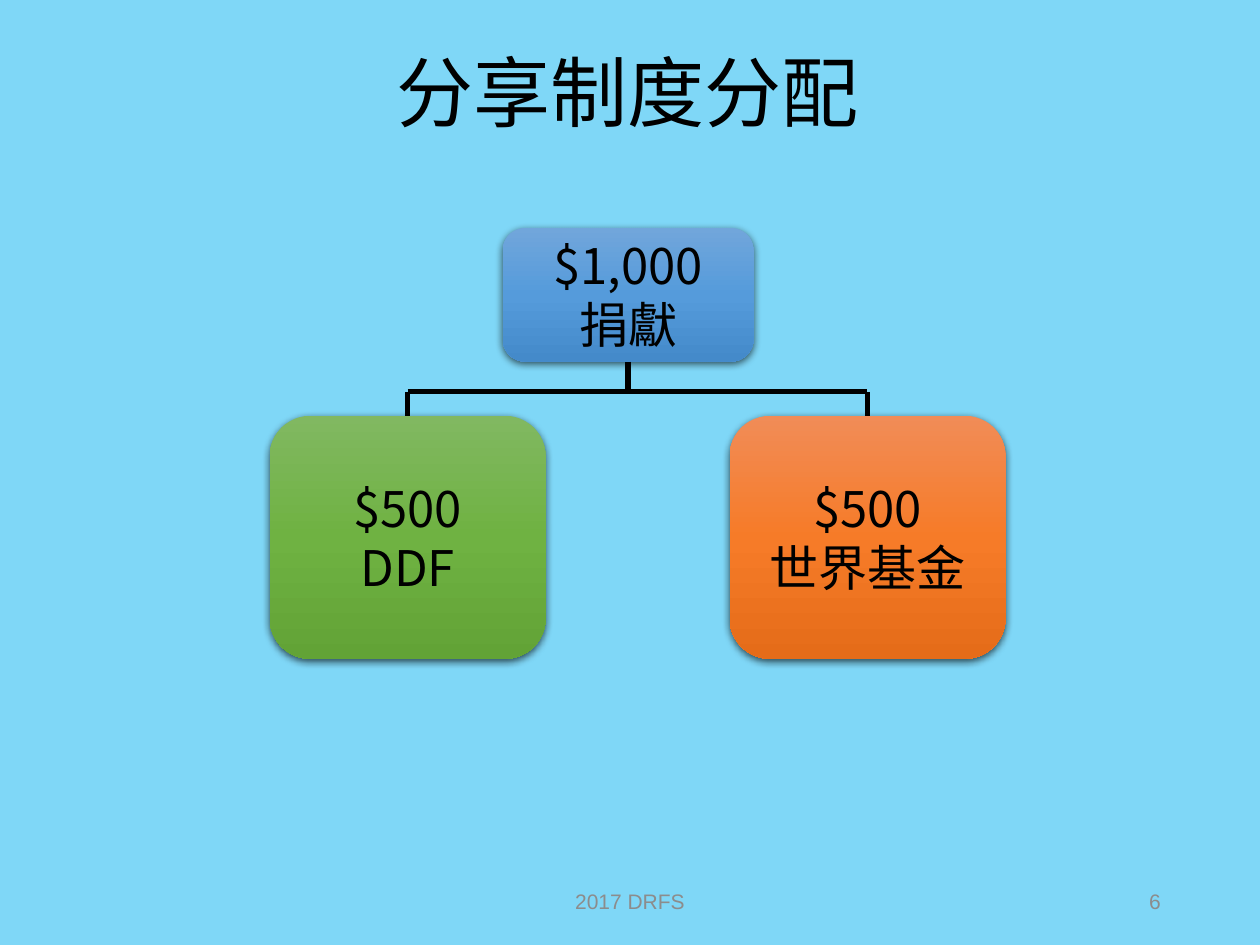
from pptx import Presentation
from pptx import util as u
from pptx.dml.color import RGBColor
from pptx.enum import shapes, text
from pptx.oxml import parse_xml
from pptx.oxml.ns import nsdecls, qn

SKY = RGBColor(0x7F, 0xD7, 0xF7)
BLACK = RGBColor(0, 0, 0)
GREY = RGBColor(0x8C, 0x8C, 0x8C)
BLUES = [RGBColor.from_string(c) for c in ("71A6DB", "559BDB", "448ACA")]
GREENS = [RGBColor.from_string(c) for c in ("81B861", "6FB242", "62A336")]
ORANGES = [RGBColor.from_string(c) for c in ("F18C57", "F67B28", "E56C19")]

CJK = "Noto Sans CJK SC"
CENTER, RIGHT = text.PP_ALIGN.CENTER, text.PP_ALIGN.RIGHT

# Tree geometry in inches
ROOT_AT = (3.99, 1.81, 1.99, 1.06)
BRANCH_SIZE = (2.19, 1.93)
BRANCH_TOP = 3.3
BAR_TOP = 3.11


def write_text(frame, lines, size, color, font=CJK, align=CENTER, spacing=None):
    """Fill a text frame with one paragraph per line."""
    frame.word_wrap = True
    frame.vertical_anchor = text.MSO_ANCHOR.MIDDLE
    font_format = {"size": u.Pt(size), "name": font}
    for index, line in enumerate(lines):
        para = frame.paragraphs[0] if index == 0 else frame.add_paragraph()
        para.alignment = align
        para.line_spacing = spacing
        span = para.add_run()
        span.text = line
        for name, value in font_format.items():
            setattr(span.font, name, value)
        span.font.color.rgb = color
        east_asian = span.font._element.makeelement(qn("a:ea"), {"typeface": font})
        span.font._element.append(east_asian)


def add_title(page, words):
    title = page.shapes.title
    place = dict(zip(("left", "top", "width", "height"),
                     map(u.Inches, (0.67, 0.24, 8.62, 1.05))))
    for name, value in place.items():
        setattr(title, name, value)
    write_text(title.text_frame, [words], 44, BLACK, spacing=0.9)


def add_box(page, at, lines, colors):
    """Rounded box with a vertical three-stop gradient and a soft shadow."""
    box = page.shapes.add_shape(shapes.MSO_SHAPE.ROUNDED_RECTANGLE, *map(u.Inches, at))
    box.line.fill.background()
    stops = "".join(f'<a:gs pos="{index * 50000}"><a:srgbClr val="{color}"/></a:gs>'
                    for index, color in enumerate(colors))
    properties = box._element.spPr
    properties.find(qn("a:prstGeom")).addnext(parse_xml(
        f'<a:gradFill {nsdecls("a")} rotWithShape="1"><a:gsLst>{stops}</a:gsLst>'
        '<a:lin ang="5400000" scaled="0"/></a:gradFill>'))
    properties.append(parse_xml(
        f'<a:effectLst {nsdecls("a")}><a:outerShdw blurRad="{u.Pt(4.5)}" '
        f'dist="{u.Pt(1.5)}" dir="5400000" algn="ctr" rotWithShape="0">'
        '<a:srgbClr val="000000"><a:alpha val="63000"/></a:srgbClr>'
        '</a:outerShdw></a:effectLst>'))
    write_text(box.text_frame, lines, 28, BLACK)
    return box


def add_line(page, start, end):
    line = page.shapes.add_connector(shapes.MSO_CONNECTOR.STRAIGHT, *start, *end)
    line.line.color.rgb = BLACK
    line.line.width = u.Pt(3)
    line._element.spPr.append(parse_xml(f'<a:effectLst {nsdecls("a")}/>'))
    return line


def join_tree(page, root, branches):
    """Trunk from the root, a crossbar, and a drop to each branch."""
    bar = u.Inches(BAR_TOP)
    middles = [box.left + box.width // 2 for box in branches]
    add_line(page, (middles[0], bar), (middles[-1], bar))
    root_middle = root.left + root.width // 2
    trunk = add_line(page, (root_middle, root.top + root.height), (root_middle, bar))
    trunk.begin_connect(root, 2)
    for box, middle in zip(branches, middles):
        add_line(page, (middle, bar), (middle, box.top)).end_connect(box, 0)


def add_footer(page, at, words, align):
    box = page.shapes.add_textbox(*map(u.Inches, at))
    write_text(box.text_frame, [words], 12, GREY, "Arial", align)


def main():
    deck = Presentation()
    deck.slide_width, deck.slide_height = u.Inches(10), u.Inches(7.5)
    page = deck.slides.add_slide(deck.slide_layouts[5])
    page.background.fill.solid()
    page.background.fill.fore_color.rgb = SKY

    add_title(page, "分享制度分配")

    # Donation and its two equal shares
    root = add_box(page, ROOT_AT, ["$1,000", "捐獻"], BLUES)
    shares = [(2.14, "DDF", GREENS), (5.79, "世界基金", ORANGES)]
    branches = [add_box(page, (left, BRANCH_TOP, *BRANCH_SIZE), ["$500", name], colors)
                for left, name, colors in shares]
    join_tree(page, root, branches)

    # Footer and page number
    add_footer(page, (3.31, 6.95, 3.38, 0.4), "2017 DRFS", CENTER)
    add_footer(page, (7.06, 6.95, 2.25, 0.4), "6", RIGHT)

    deck.save("out.pptx")


if __name__ == "__main__":
    main()
